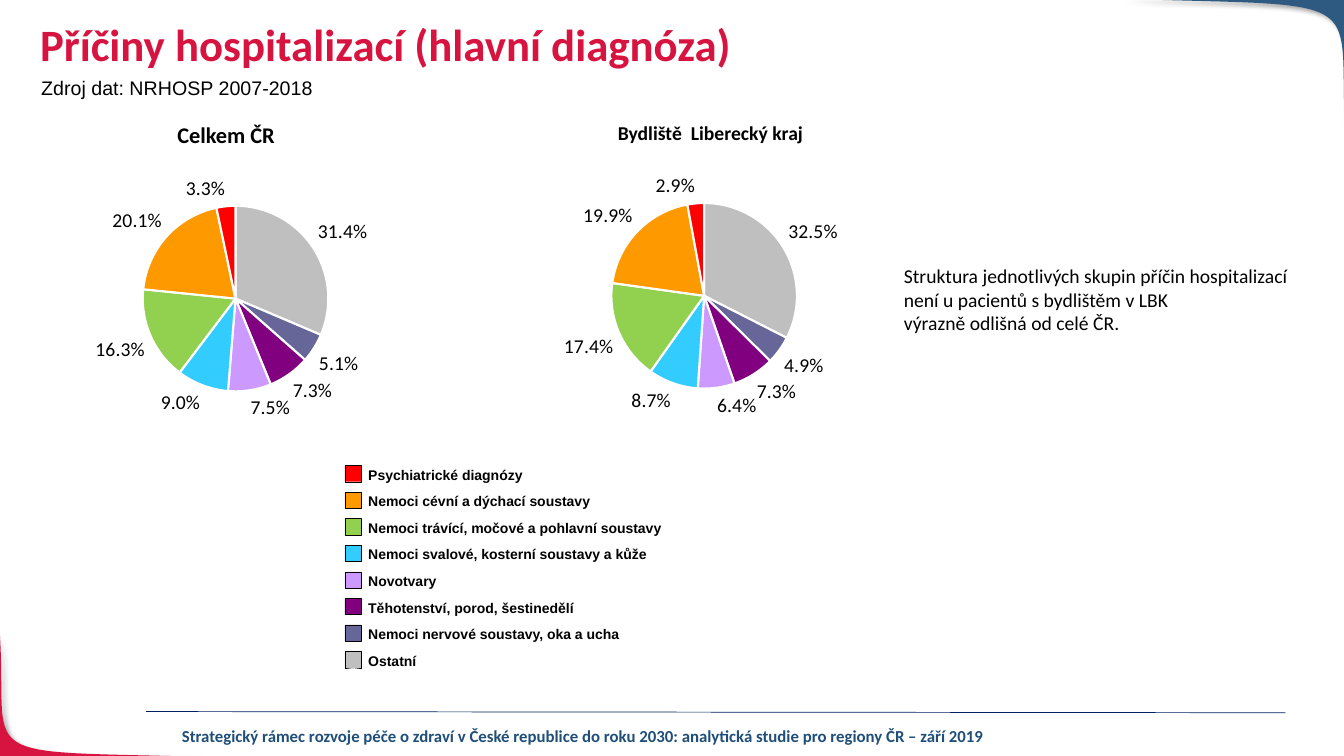
from lxml import etree
from pptx import Presentation
from pptx import util as u
from pptx.chart import data as cd
from pptx.dml.color import RGBColor
from pptx.enum import chart as ch, shapes, text
from pptx.oxml import parse_xml
from pptx.oxml.ns import nsdecls, qn

Cm, Pt = u.Cm, u.Pt
RED, BLUE, BLACK = "D71440", "2E5980", "000000"

DIAGNOSES = [
    ("Psychiatrické diagnózy", "FF0000"),
    ("Nemoci cévní a dýchací soustavy", "FF9900"),
    ("Nemoci trávící, močové a pohlavní soustavy", "92D050"),
    ("Nemoci svalové, kosterní soustavy a kůže", "33CCFF"),
    ("Novotvary", "CC99FF"),
    ("Těhotenství, porod, šestinedělí", "800080"),
    ("Nemoci nervové soustavy, oka a ucha", "666699"),
    ("Ostatní", "BFBFBF"),
]
CZECHIA = [0.314, 0.051, 0.073, 0.075, 0.09, 0.163, 0.201, 0.033]
LIBEREC = [0.325, 0.049, 0.073, 0.064, 0.087, 0.174, 0.199, 0.029]


def rgb(value):
    return RGBColor.from_string(value)


def set_font(font, size, color=BLACK, bold=False, name="Calibri"):
    font.name, font.size, font.bold = name, Pt(size), bold
    font.color.rgb = rgb(color)


def add_text(s, box, lines, size, color=BLACK, bold=False, name="Calibri",
             wrap=True, align=text.PP_ALIGN.LEFT, spacing=None):
    tf = s.shapes.add_textbox(*map(Cm, box)).text_frame
    tf.word_wrap = wrap
    for i, line in enumerate(lines):
        p = tf.add_paragraph() if i else tf.paragraphs[0]
        p.text, p.alignment, p.line_spacing = line, align, spacing
        set_font(p.font, size, color, bold, name)


def add_corner(s, curve, corner, color):
    """Fill the area between a cubic Bézier curve and a slide corner."""
    steps = 40
    points = []
    for i in range(steps + 1):
        t = i / steps
        weights = ((1 - t) ** 3, 3 * t * (1 - t) ** 2, 3 * t * t * (1 - t), t ** 3)
        points.append(tuple(Cm(sum(w * c[axis] for w, c in zip(weights, curve)))
                            for axis in (0, 1)))
    fb = s.shapes.build_freeform(*points[0])
    fb.add_line_segments(points[1:] + [tuple(map(Cm, corner))], close=True)
    sp = fb.convert_to_shape()
    sp.fill.solid()
    sp.fill.fore_color.rgb = rgb(color)
    sp.line.fill.background()
    sp._element.spPr.append(parse_xml(
        f'<a:effectLst {nsdecls("a")}>'
        '<a:outerShdw blurRad="50800" dist="38100" dir="2700000" algn="tl" rotWithShape="0">'
        '<a:srgbClr val="000000"><a:alpha val="40000"/></a:srgbClr>'
        '</a:outerShdw></a:effectLst>'))


def add_rule(s, start, end):
    line = s.shapes.add_connector(shapes.MSO_CONNECTOR.STRAIGHT,
                                  *map(Cm, start + end))
    line.line.color.rgb = rgb("002060")
    line.line.width = Pt(0.5)
    etree.SubElement(line._element.spPr, qn("a:effectLst"))


def add_legend(s, left, top, width, row_height):
    rows = len(DIAGNOSES)
    table = s.shapes.add_table(rows, 1, Cm(left), Cm(top), Cm(width),
                               Cm(row_height * rows)).table
    table.first_row = table.horz_banding = False
    for i, (label, color) in enumerate(DIAGNOSES):
        table.rows[i].height = Cm(row_height)
        cell = table.cell(i, 0)
        cell.fill.background()
        cell.margin_left = cell.margin_right = cell.margin_top = Cm(0.03)
        cell.margin_bottom = 0
        cell.vertical_anchor = text.MSO_ANCHOR.MIDDLE
        cell.text = label
        set_font(cell.text_frame.paragraphs[0].font, 10, bold=True, name="Arial")

        key = s.shapes.add_shape(shapes.MSO_SHAPE.RECTANGLE, Cm(left - 0.56),
                                 Cm(top + 0.1 + i * row_height), Cm(0.41), Cm(0.41))
        key.shadow.inherit = False
        key.fill.solid()
        key.fill.fore_color.rgb = rgb(color)
        key.line.color.rgb = rgb(BLACK)
        key.line.width = Pt(0.25)


def set_plot_area(chart, **fractions):
    """Place the inner plot area by fractions x, y, w and h of the chart."""
    plot_area = chart._chartSpace.chart.plotArea
    for old in plot_area.findall(qn("c:layout")):
        plot_area.remove(old)
    sizes = "".join(f'<c:{k} val="{v}"/>' for k, v in fractions.items())
    plot_area.insert(0, parse_xml(
        f'<c:layout {nsdecls("c")}><c:manualLayout><c:layoutTarget val="inner"/>'
        f'<c:xMode val="edge"/><c:yMode val="edge"/>{sizes}'
        '</c:manualLayout></c:layout>'))


def add_pie(s, left, top, values):
    data = cd.CategoryChartData(number_format="0.0%")
    data.categories = [str(i + 1) for i in range(len(values))]
    data.add_series("Series 1", values)
    chart = s.shapes.add_chart(ch.XL_CHART_TYPE.PIE, Cm(left), Cm(top),
                               Cm(13.36), Cm(6.93), data).chart
    chart.has_legend = chart.has_title = False
    set_font(chart.font, 10)
    set_plot_area(chart, x=0.33, y=0.16, w=0.35, h=0.68)
    plot = chart.plots[0]
    plot.vary_by_categories = True
    for i, (_, color) in enumerate(reversed(DIAGNOSES)):
        fmt = plot.series[0].points[i].format
        fmt.fill.solid()
        fmt.fill.fore_color.rgb = rgb(color)
        fmt.line.color.rgb = rgb("FFFFFF")
        fmt.line.width = Pt(1.5)
    plot.has_data_labels = True
    labels = plot.data_labels
    labels.show_value, labels.show_percentage = True, False
    labels.number_format, labels.number_format_is_linked = "0.0%", False
    labels.position = ch.XL_LABEL_POSITION.OUTSIDE_END
    set_font(labels.font, 14)


def main():
    prs = Presentation()
    prs.slide_width, prs.slide_height = Cm(33.87), Cm(19.05)
    s = prs.slides.add_slide(prs.slide_layouts[6])

    add_corner(s, [(5.41, 19.08), (-0.86, 18.9), (0.2, 19.28), (0, 16)],
               (-0.03, 19.08), RED)
    add_corner(s, [(28.22, -0.03), (34.8, 0.18), (33.68, -0.25), (33.91, 3.61)],
               (33.91, -0.03), BLUE)
    add_rule(s, (3.68, 17.93), (32.39, 17.96))
    add_text(s, (4.27, 18.16, 20.85, 0.76),
             ["Strategický rámec rozvoje péče o zdraví v České republice do roku 2030: "
              "analytická studie pro regiony ČR – září 2019"],
             12, "1F4E79", bold=True, align=text.PP_ALIGN.CENTER)

    add_text(s, (0.76, 0.46, 29.21, 1.75), ["Příčiny hospitalizací (hlavní diagnóza)"],
             32, RED, bold=True, spacing=0.9)
    add_text(s, (0.79, 1.8, 21.49, 0.86), ["Zdroj dat: NRHOSP 2007-2018"],
             14, name="Arial")

    add_legend(s, 9.25, 11.63, 8.26, 0.67)
    add_pie(s, -0.81, 4.06, CZECHIA)
    add_pie(s, 11, 3.99, LIBEREC)
    add_text(s, (4.22, 2.92, 3.02, 0.94), ["Celkem ČR"], 16, bold=True, wrap=False)
    add_text(s, (15.32, 2.92, 5.26, 0.86), ["Bydliště  Liberecký kraj"],
             14, bold=True, wrap=False)
    add_text(s, (22.53, 6.53, 10.62, 8.41),
             ["Struktura jednotlivých skupin příčin hospitalizací",
              "není u pacientů s bydlištěm v LBK",
              "výrazně odlišná od celé ČR."], 14)

    prs.save("out.pptx")


if __name__ == "__main__":
    main()
